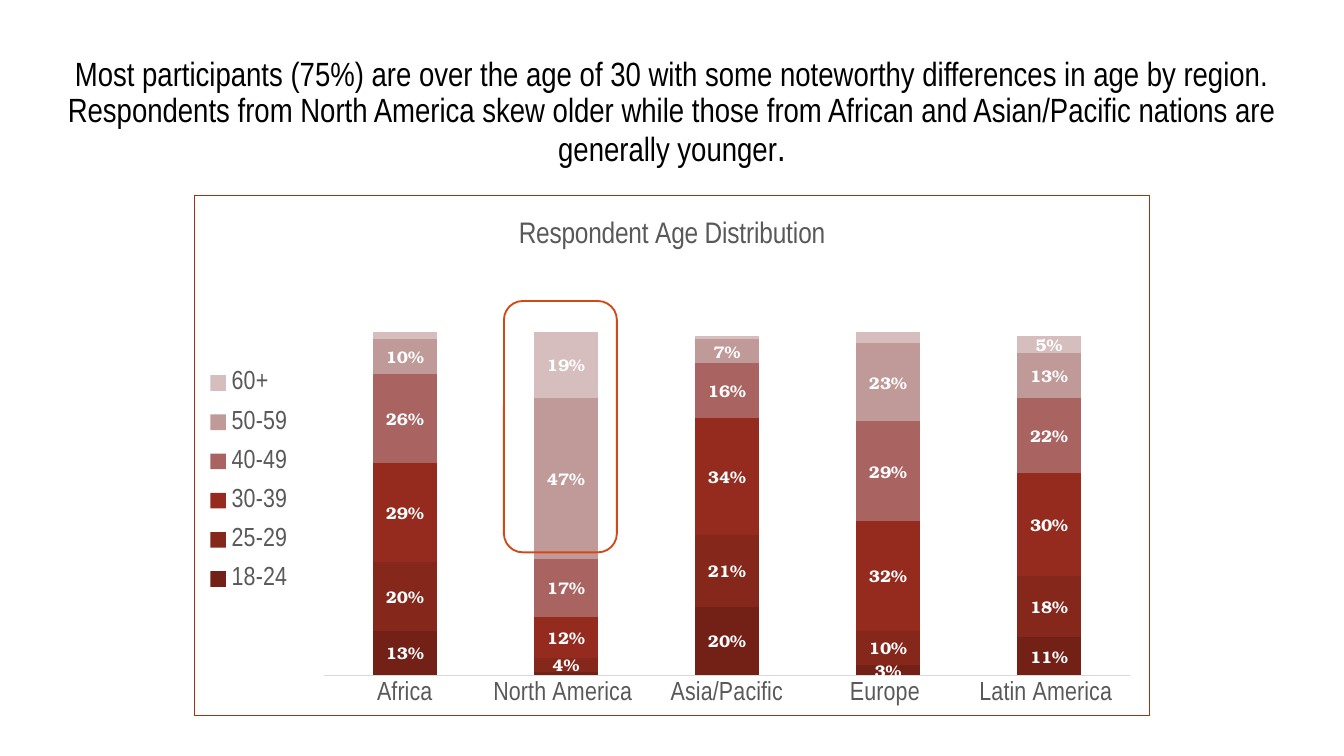
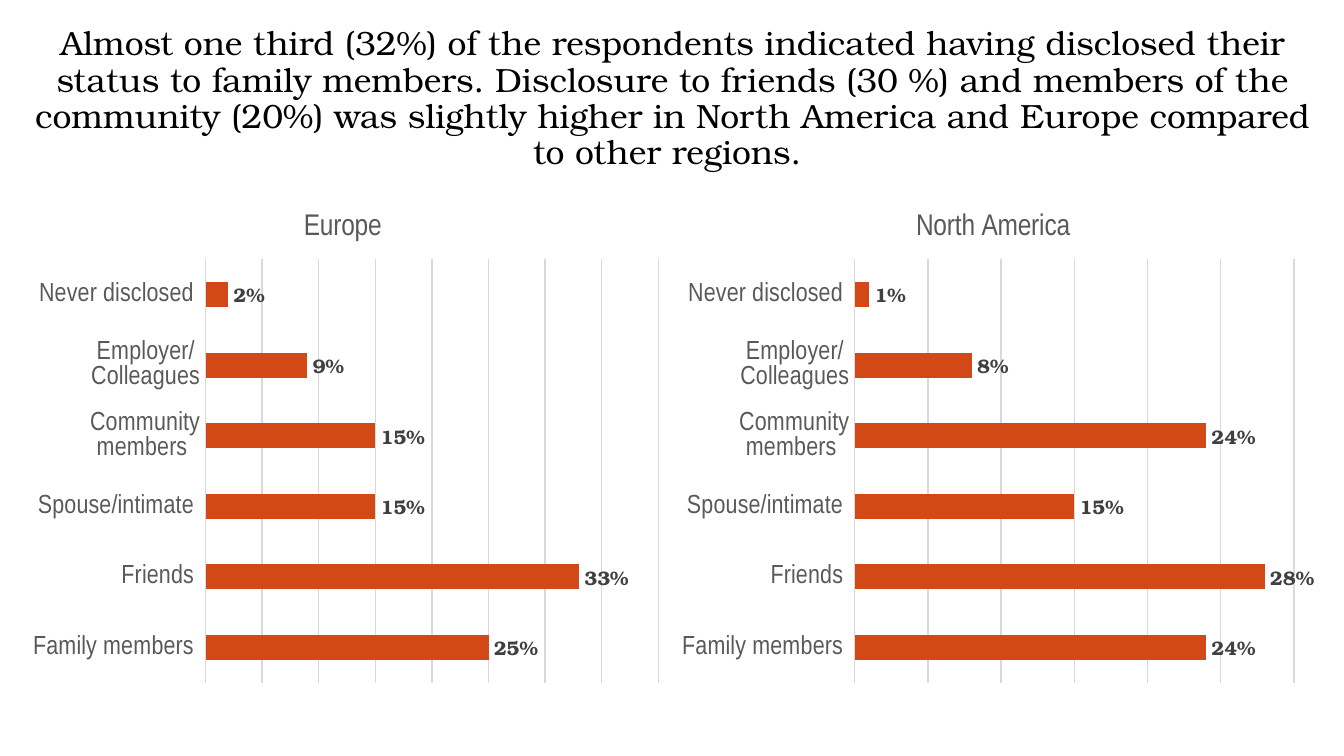
from pptx import Presentation
from pptx.chart.data import CategoryChartData
from pptx.dml.color import RGBColor
from pptx.enum.chart import XL_CHART_TYPE, XL_LABEL_POSITION, XL_LEGEND_POSITION, XL_TICK_MARK
from pptx.enum.shapes import MSO_SHAPE
from pptx.enum.text import MSO_ANCHOR, PP_ALIGN
from pptx.oxml import parse_xml
from pptx.oxml.ns import nsdecls, qn
from pptx.util import Inches, Pt

STACKED = XL_CHART_TYPE.COLUMN_STACKED
BARS = XL_CHART_TYPE.BAR_CLUSTERED
NO_TICK = XL_TICK_MARK.NONE
TITLE_ONLY = 5


class Theme:
    narrow = "Arial Narrow"
    serif = "TeX Gyre Bonum"
    black = "000000"
    grey = "595959"
    dark_grey = "404040"
    light_grey = "D9D9D9"
    white = "FFFFFF"
    orange = "D34817"
    border = "9C3511"
    title_size = 18
    period_size = 20
    chart_title_size = 16
    axis_size = 14
    base_size = 10
    age_label_size = 9
    bar_label_size = 10.5


AGE_TITLE = [
    ("Most participants (75%) are over the age of 30 with some noteworthy differences in age by "
     "region. Respondents from North America skew older while those from African and "
     "Asian/Pacific nations are generally younger", Theme.title_size),
    (".", Theme.period_size),
]
REGIONS = ["Africa", "North America ", "Asia/Pacific", "Europe ", "Latin America "]
# age group, share per region, colour, regions without a label
AGE_GROUPS = [
    ("18-24 ", [0.13, 0.01, 0.20, 0.03, 0.11], "732117", [1]),
    ("25-29 ", [0.20, 0.04, 0.21, 0.10, 0.18], "85271B", []),
    ("30-39 ", [0.29, 0.12, 0.34, 0.32, 0.30], "942B1E", []),
    ("40-49 ", [0.26, 0.17, 0.16, 0.29, 0.22], "A96461", []),
    ("50-59 ", [0.10, 0.47, 0.07, 0.23, 0.13], "C09A98", []),
    ("60+ ", [0.02, 0.19, 0.01, 0.03, 0.05], "D5BEBD", [0, 2, 3]),
]
AGE_CHART_BOX = (1.44, 1.45, 7.12, 3.88)
AGE_PLOT_BOX = (2.41, 1.96, 6, 3.07)
AGE_LEGEND_BOX = (1.47, 2.65, 0.8, 1.86)

DISCLOSURE_TITLE = [
    ("Almost one third (32%) of the respondents indicated having disclosed their status to "
     "family members. Disclosure to friends (30 %) and members of the community (20%) was "
     "slightly higher in North America and Europe compared to other regions. ", Theme.title_size),
]
CONFIDANTS = ["Family members ", "Friends ", "Spouse/intimate ", "Community members ",
              "Employer/Colleagues", "Never disclosed "]
# region, shares, axis maximum, chart box, plot box
DISCLOSURES = [
    ("Europe ", [0.25, 0.33, 0.15, 0.15, 0.09, 0.02], 0.4,
     (0.15, 1.4, 4.85, 3.75), (1.53, 1.93, 3.37, 3.15)),
    ("North America", [0.24, 0.28, 0.15, 0.24, 0.08, 0.01], 0.3,
     (5, 1.4, 4.78, 3.75), (6.36, 1.93, 3.27, 3.15)),
]


def color(value):
    return RGBColor.from_string(value)


def style_font(font, name, size, value, bold=False):
    font.name, font.size, font.bold = name, Pt(size), bold
    font.color.rgb = color(value)


def style_line(line, value, width=0.75):
    line.color.rgb = color(value)
    line.width = Pt(width)


def add_titled_slide(presentation, box, runs, font_name):
    slide = presentation.slides.add_slide(presentation.slide_layouts[TITLE_ONLY])
    title = slide.shapes.title
    title.left, title.top, title.width, title.height = map(Inches, box)
    frame = title.text_frame
    frame.word_wrap = True
    frame.vertical_anchor = MSO_ANCHOR.MIDDLE
    paragraph = frame.paragraphs[0]
    paragraph.alignment = PP_ALIGN.CENTER
    paragraph.line_spacing = 0.9
    for text, size in runs:
        run = paragraph.add_run()
        run.text = text
        style_font(run.font, font_name, size, Theme.black)
    return slide


def manual_layout(chart_box, part_box, target=""):
    """Return a c:layout placing a chart part; both boxes are in slide inches."""
    left, top, width, height = chart_box
    part_left, part_top, part_width, part_height = part_box
    x, y = (part_left - left) / width, (part_top - top) / height
    return parse_xml(
        f'<c:layout {nsdecls("c")}><c:manualLayout>{target}'
        '<c:xMode val="edge"/><c:yMode val="edge"/>'
        f'<c:x val="{x:.4f}"/><c:y val="{y:.4f}"/>'
        f'<c:w val="{part_width / width:.4f}"/><c:h val="{part_height / height:.4f}"/>'
        '</c:manualLayout></c:layout>')


def remove_layout(element):
    for layout in element.findall(qn("c:layout")):
        element.remove(layout)


def frame_chart(chart, line_fill):
    chart._chartSpace.chart.addnext(parse_xml(
        f'<c:spPr {nsdecls("c", "a")}><a:noFill/><a:ln w="9525">{line_fill}</a:ln></c:spPr>'))


def add_percent_chart(slide, kind, box, plot_box, title, categories, series, maximum, unit, gap):
    """Add a chart of (name, values) series with the axis and title style both slides share."""
    data = CategoryChartData(number_format="0%")
    data.categories = categories
    for name, values in series:
        data.add_series(name, values)
    chart = slide.shapes.add_chart(kind, *map(Inches, box), data).chart
    style_font(chart.font, Theme.serif, Theme.base_size, Theme.black)

    chart.has_title = True
    chart.chart_title.include_in_layout = False
    chart.chart_title.text_frame.text = title
    run = chart.chart_title.text_frame.paragraphs[0].runs[0]
    style_font(run.font, Theme.narrow, Theme.chart_title_size, Theme.grey)
    chart.has_legend = False

    category_axis = chart.category_axis
    category_axis.has_major_gridlines = False
    category_axis.major_tick_mark = category_axis.minor_tick_mark = NO_TICK
    style_font(category_axis.tick_labels.font, Theme.narrow, Theme.axis_size, Theme.grey)
    style_line(category_axis.format.line, Theme.light_grey)

    value_axis = chart.value_axis
    value_axis.minimum_scale, value_axis.maximum_scale = 0, maximum
    value_axis.major_unit = unit
    value_axis.has_major_gridlines = False
    value_axis.tick_labels.number_format = "0%"
    value_axis.tick_labels.number_format_is_linked = False
    value_axis.visible = False

    chart.plots[0].gap_width = gap
    chart.plots[0].vary_by_categories = False
    plot_area = chart._chartSpace.chart.plotArea
    remove_layout(plot_area)
    plot_area.insert(0, manual_layout(box, plot_box, '<c:layoutTarget val="inner"/>'))
    return chart


def style_series(series, fill, label_size, label_color, position, unlabelled=()):
    series.format.fill.solid()
    series.format.fill.fore_color.rgb = color(fill)
    series.invert_if_negative = False
    labels = series.data_labels
    labels.show_value = True
    labels.number_format = "0%"
    labels.number_format_is_linked = False
    labels.position = position
    style_font(labels.font, Theme.serif, label_size, label_color, bold=True)
    for index in reversed(unlabelled):
        labels._element.insert(0, parse_xml(
            f'<c:dLbl {nsdecls("c")}><c:idx val="{index}"/><c:delete val="1"/></c:dLbl>'))


def add_age_legend(chart):
    chart.has_legend = True
    legend = chart.legend
    legend.position = XL_LEGEND_POSITION.LEFT
    legend.include_in_layout = False
    style_font(legend.font, Theme.narrow, Theme.axis_size, Theme.grey)
    remove_layout(legend._element)
    legend._element.find(qn("c:legendPos")).addnext(
        manual_layout(AGE_CHART_BOX, AGE_LEGEND_BOX))


def build_age_slide(presentation):
    slide = add_titled_slide(presentation, (0.1, 0.56, 9.8, 0.57), AGE_TITLE, Theme.narrow)
    chart = add_percent_chart(
        slide, STACKED, AGE_CHART_BOX, AGE_PLOT_BOX, "Respondent Age Distribution", REGIONS,
        [group[:2] for group in AGE_GROUPS], maximum=1.2, unit=0.2, gap=150)
    chart.plots[0].overlap = 100
    for series, (_, _, fill, unlabelled) in zip(chart.plots[0].series, AGE_GROUPS):
        style_series(series, fill, Theme.age_label_size, Theme.white,
                     XL_LABEL_POSITION.CENTER, unlabelled)
    add_age_legend(chart)
    frame_chart(chart, f'<a:solidFill><a:srgbClr val="{Theme.border}"/></a:solidFill>')

    highlight = slide.shapes.add_shape(
        MSO_SHAPE.ROUNDED_RECTANGLE, *map(Inches, (3.75, 2.24, 0.84, 1.87)))
    highlight.shadow.inherit = False
    highlight.fill.background()
    style_line(highlight.line, Theme.orange, 1)


def build_disclosure_slide(presentation):
    slide = add_titled_slide(presentation, (0.12, 0.08, 9.77, 1.32), DISCLOSURE_TITLE, Theme.serif)
    for region, shares, maximum, box, plot_box in DISCLOSURES:
        chart = add_percent_chart(slide, BARS, box, plot_box, region, CONFIDANTS,
                                  [("Series 1", shares)], maximum, unit=0.05, gap=182)
        chart.value_axis.has_major_gridlines = True
        style_line(chart.value_axis.major_gridlines.format.line, Theme.light_grey)
        style_series(chart.plots[0].series[0], Theme.orange, Theme.bar_label_size,
                     Theme.dark_grey, XL_LABEL_POSITION.OUTSIDE_END)
        frame_chart(chart, "<a:noFill/>")


def main():
    presentation = Presentation()
    presentation.slide_width = Inches(10)
    presentation.slide_height = presentation.slide_width * 9 // 16
    build_age_slide(presentation)
    build_disclosure_slide(presentation)
    presentation.save("out.pptx")


if __name__ == "__main__":
    main()
